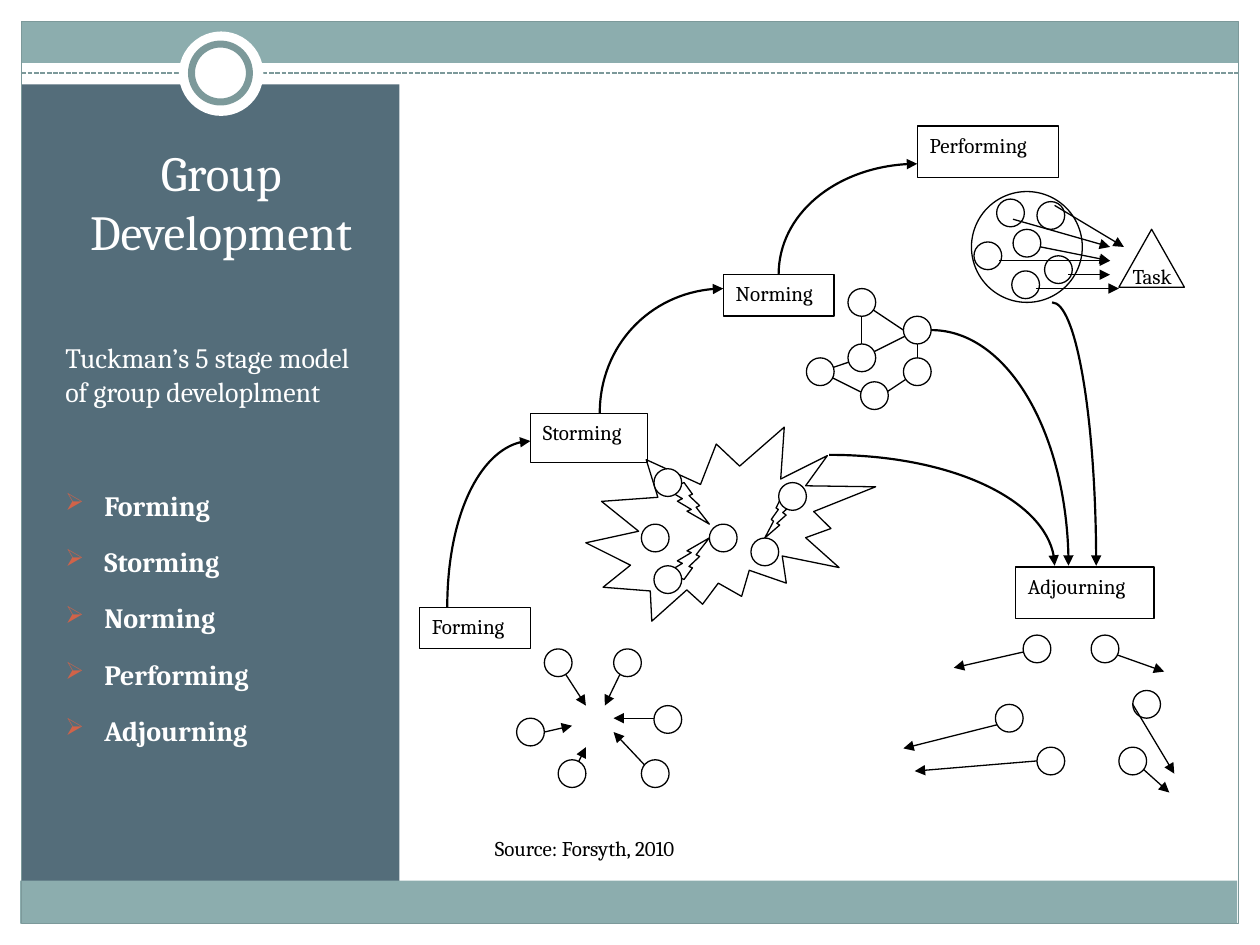
from lxml.etree import SubElement
from pptx import Presentation
from pptx.dml.color import RGBColor
from pptx.enum.dml import MSO_LINE
from pptx.enum.shapes import MSO_CONNECTOR, MSO_SHAPE
from pptx.enum.text import MSO_ANCHOR, PP_ALIGN
from pptx.oxml.ns import qn
from pptx.util import Emu, Pt

THEME = {
    "font": "Cambria", "title": 28, "body": 16, "label": 12,
    "white": RGBColor(0xFF, 0xFF, 0xFF), "black": RGBColor(0, 0, 0),
    "band": RGBColor(0x8C, 0xAD, 0xAE), "panel": RGBColor(0x54, 0x6D, 0x7A),
    "trim": RGBColor(0x7C, 0x99, 0x9A), "bullet": "D16349",
    "thin": 0.75, "thick": 1.25,
}
SCALE = 9144  # EMU per px, 100 px to the inch
DOT = 22      # diameter of a group member

deck = Presentation()
deck.slide_width, deck.slide_height = Emu(1000 * SCALE), Emu(750 * SCALE)
page = deck.slides.add_slide(deck.slide_layouts[6])


def add_box(kind, left, top, width, height, fill=None, line=THEME["black"],
            weight=THEME["thin"], text=""):
    box = page.shapes.add_shape(kind, *(Emu(v * SCALE) for v in (left, top, width, height)))
    box.shadow.inherit = False
    if fill is None:
        box.fill.background()
    else:
        box.fill.solid()
        box.fill.fore_color.rgb = fill
    if line is None:
        box.line.fill.background()
    else:
        box.line.color.rgb = line
        box.line.width = Pt(weight)
    if text:
        box.text_frame.vertical_anchor = MSO_ANCHOR.TOP
        para = box.text_frame.paragraphs[0]
        para.text = text
        para.alignment = PP_ALIGN.LEFT
        para.font.name, para.font.size = THEME["font"], Pt(THEME["label"])
        para.font.color.rgb = THEME["black"]
    return box


def add_line(x1, y1, x2, y2, arrow=True, color=THEME["black"], weight=THEME["thin"]):
    line = page.shapes.add_connector(
        MSO_CONNECTOR.STRAIGHT, *(Emu(v * SCALE) for v in (x1, y1, x2, y2)))
    line.line.color.rgb = color
    line.line.width = Pt(weight)
    if arrow:
        SubElement(line.line._get_or_add_ln(), qn("a:tailEnd"), type="triangle")
    SubElement(line.element.spPr, qn("a:effectLst"))
    return line


# Page frame
divider = add_line(17, 58, 983, 58, arrow=False, color=THEME["trim"], weight=0.9)
divider.line.dash_style = MSO_LINE.SQUARE_DOT
for left, top, width, height, fill in [
    (17, 17, 966, 33, THEME["band"]),
    (17, 67, 300, 642, THEME["panel"]),
    (16, 699, 966, 34, THEME["band"]),
]:
    add_box(MSO_SHAPE.RECTANGLE, left, top, width, height, fill, None)
add_box(MSO_SHAPE.RECTANGLE, 17, 17, 966, 716, line=THEME["trim"])
add_box(MSO_SHAPE.OVAL, 142, 25, 67, 67, THEME["white"], None)
add_box(MSO_SHAPE.OVAL, 152, 35, 46, 46, THEME["white"], THEME["trim"], 4)

# Side panel text: wording, size, space before, bulleted
panel = page.shapes.add_textbox(*(Emu(v * SCALE) for v in (42, 108, 267, 575)))
panel.text_frame.word_wrap = True
stages = ["Forming", "Storming", "Norming", "Performing", "Adjourning"]
entries = [("Group Development", THEME["title"], 3, False),
           ("Tuckman’s 5 stage model of group developlment", THEME["body"], 36, False)]
entries += [(stage, THEME["body"], 3 if i else 36, True) for i, stage in enumerate(stages)]
for i, (text, size, before, bulleted) in enumerate(entries):
    para = panel.text_frame.add_paragraph() if i else panel.text_frame.paragraphs[0]
    para.text = text
    para.alignment = PP_ALIGN.LEFT if i else PP_ALIGN.CENTER
    para.space_before, para.space_after = Pt(before), Pt(10)
    para.font.name, para.font.size, para.font.bold = THEME["font"], Pt(size), bulleted
    para.font.color.rgb = THEME["white"]
    if bulleted:
        props = para._p.get_or_add_pPr()
        props.set("marL", str(31 * SCALE))
        props.set("indent", str(-31 * SCALE))
        color = SubElement(props, qn("a:buClr"))
        SubElement(color, qn("a:srgbClr"), val=THEME["bullet"])
        SubElement(props, qn("a:buSzPct"), val="85000")
        SubElement(props, qn("a:buChar"), char="➢")
        # Bullet settings come before the default run settings
        props.append(props.find(qn("a:defRPr")))

# Storming burst and lightning
add_box(MSO_SHAPE.EXPLOSION2, 465, 339, 230, 154)
for left, top, width, flip in [(530, 383, 33, None), (530, 427, 33, "flipV"),
                               (607, 394, 22, "flipH")]:
    bolt = add_box(MSO_SHAPE.LIGHTNING_BOLT, left, top, width, 33, THEME["white"])
    if flip:
        bolt.element.spPr.find(qn("a:xfrm")).set(flip, "1")

# Performing circle and task
add_box(MSO_SHAPE.OVAL, 771, 152, 88, 88)
add_box(MSO_SHAPE.ISOSCELES_TRIANGLE, 888, 182, 52, 46)

# Group members: links beneath, members (left, top), links on top
scenes = {
    "forming": (
        [(432, 581, 454, 576), (443, 526, 465, 560), (519, 570, 487, 570),
         (519, 615, 487, 581), (454, 615, 465, 593), (496, 527, 480, 560)],
        [(519, 560), (410, 570), (432, 515), (487, 515), (509, 603), (443, 603)], []),
    "storming": (
        [], [(563, 416), (509, 416), (618, 383), (596, 427), (519, 449), (519, 372)], []),
    "norming": (
        [(684, 240, 717, 262), (684, 240, 684, 284), (695, 317, 728, 295),
         (728, 262, 728, 295), (684, 284, 728, 262), (684, 284, 651, 295),
         (651, 295, 695, 317)],
        [(673, 229), (717, 251), (717, 284), (673, 273), (683, 303), (640, 284)], []),
    "performing": (
        [], [(804, 182), (773, 192), (823, 160), (829, 203), (803, 215), (791, 158)],
        [(837, 163, 892, 196), (804, 174, 881, 196), (826, 196, 881, 207),
         (848, 218, 881, 218), (822, 229, 888, 229), (793, 207, 881, 207)]),
    "adjourning": (
        [(812, 570, 717, 594), (823, 515, 757, 530), (899, 603, 928, 629),
         (834, 603, 726, 612), (876, 516, 924, 533)],
        [(899, 548), (790, 559), (812, 504), (866, 504), (888, 593), (823, 593)],
        [(899, 559, 932, 614)]),
}
for stage, (beneath, members, on_top) in scenes.items():
    for ends in beneath:
        add_line(*ends, arrow=stage != "norming")
    for left, top in members:
        add_box(MSO_SHAPE.OVAL, left, top, DOT, DOT, THEME["white"])
    for ends in on_top:
        add_line(*ends)

# Stage labels
for stage, place in zip(stages, [(333, 482, 88, 33), (421, 328, 93, 39), (574, 218, 88, 33),
                                 (728, 100, 112, 41), (806, 450, 110, 41)]):
    add_box(MSO_SHAPE.RECTANGLE, *place, text=stage)

# Quarter-ellipse arrows: rising ones start upright, falling ones start level
for x1, y1, x2, y2 in [(355, 482, 421, 350), (476, 328, 574, 229), (618, 218, 728, 130),
                       (658, 361, 837, 449), (739, 262, 848, 449), (835, 240, 870, 449)]:
    reach_x, reach_y = round((x2 - x1) * 0.55), round((y2 - y1) * 0.55)
    if y2 < y1:
        bends = [(x1, y1 + reach_y), (x2 - reach_x, y2)]
    else:
        bends = [(x1 + reach_x, y1), (x2, y2 - reach_y)]
    builder = page.shapes.build_freeform(x1, y1, scale=SCALE)
    builder.add_line_segments(bends + [(x2, y2)], close=False)
    curve = builder.convert_to_shape()
    curve.shadow.inherit = False
    curve.fill.background()
    curve.line.color.rgb = THEME["black"]
    curve.line.width = Pt(THEME["thick"])
    SubElement(curve.line._get_or_add_ln(), qn("a:tailEnd"), type="triangle")
    outline = curve.element.find(".//" + qn("a:path"))
    segments = outline.findall(qn("a:lnTo"))
    bezier = SubElement(outline, qn("a:cubicBezTo"))
    for segment in segments:
        bezier.append(segment[0])
        outline.remove(segment)

# Free labels
for text, place, wrap in [("Task", (889, 204, 66, 33), True),
                          ("Source: Forsyth, 2010", (383, 658, 183, 30), False)]:
    box = page.shapes.add_textbox(*(Emu(v * SCALE) for v in place))
    box.text_frame.word_wrap = wrap
    para = box.text_frame.paragraphs[0]
    para.text = text
    para.font.name, para.font.size = THEME["font"], Pt(THEME["label"])
    para.font.color.rgb = THEME["black"]

deck.save("out.pptx")
